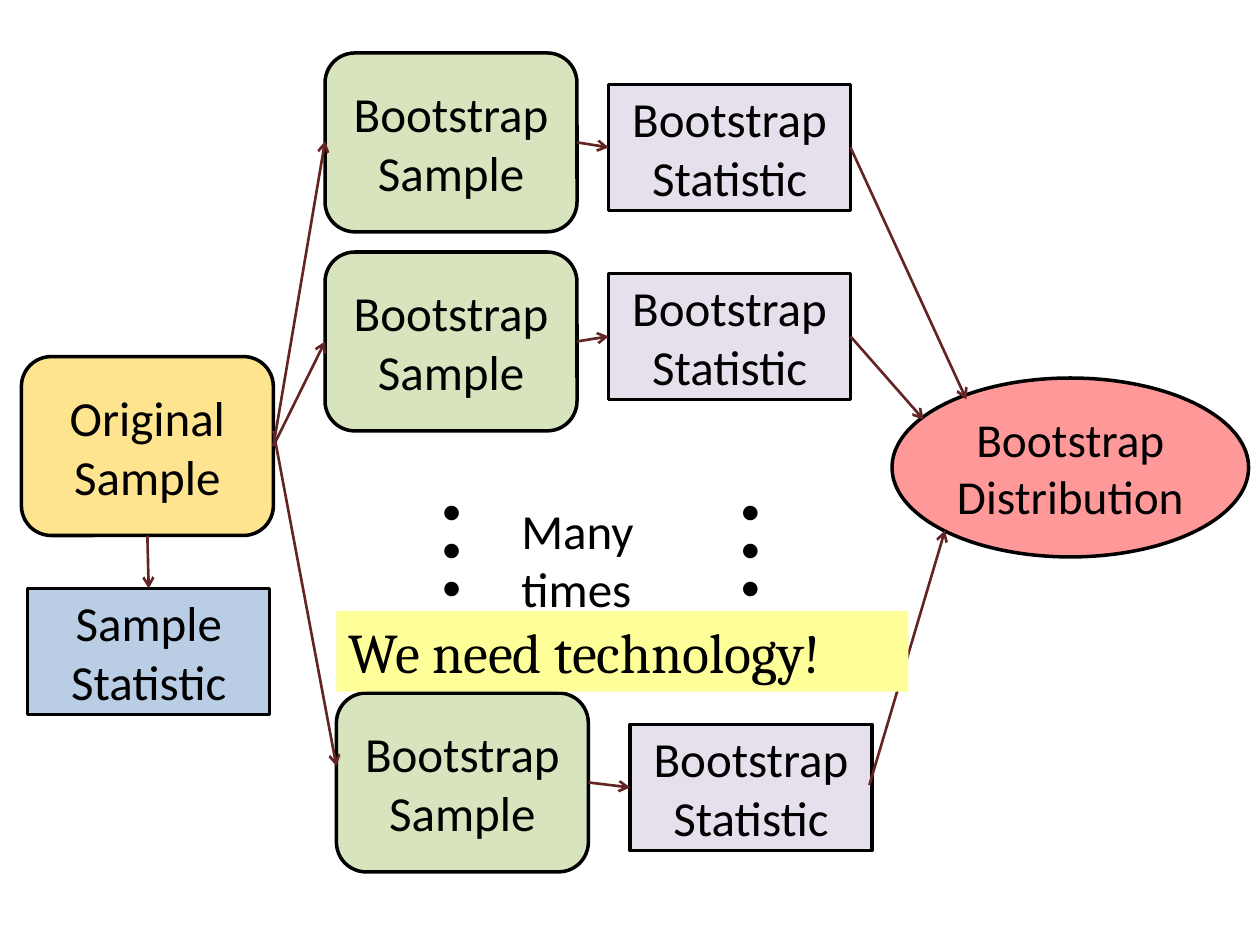
from lxml.etree import SubElement
from pptx import Presentation
from pptx.dml.color import RGBColor
from pptx.enum.shapes import MSO_CONNECTOR, MSO_SHAPE
from pptx.enum.text import MSO_ANCHOR, MSO_AUTO_SIZE, PP_ALIGN
from pptx.oxml.ns import qn
from pptx.util import Inches, Pt

COLORS = {
    "ink": "000000",
    "arrow": "632523",
    "original": "FFE48F",
    "sample": "D7E4BD",
    "bootstrap_statistic": "E6E0EC",
    "sample_statistic": "B9CDE5",
    "distribution": "FF9999",
    "banner": "FFFF99",
}

prs = Presentation()
prs.slide_width, prs.slide_height = Inches(10), Inches(7.5)
slide = prs.slides.add_slide(prs.slide_layouts[6])


def add_block(kind, left, top, width, height, text, fill=None, outlined=True,
              size=28, font="Calibri", align=PP_ALIGN.CENTER):
    box = [Inches(value) for value in (left, top, width, height)]
    if fill:
        block = slide.shapes.add_shape(kind, *box)
        block.shadow.inherit = False
        block.fill.solid()
        block.fill.fore_color.rgb = RGBColor.from_string(COLORS[fill])
        if outlined:
            block.line.color.rgb = RGBColor.from_string(COLORS["ink"])
            block.line.width = Pt(2)
        else:
            block.line.fill.background()
    else:
        block = slide.shapes.add_textbox(*box)
    frame = block.text_frame
    frame.text = text
    frame.word_wrap = True
    if fill and outlined:
        frame.vertical_anchor = MSO_ANCHOR.MIDDLE
    else:
        frame.vertical_anchor = MSO_ANCHOR.TOP
        frame.auto_size = MSO_AUTO_SIZE.SHAPE_TO_FIT_TEXT
    for paragraph in frame.paragraphs:
        paragraph.alignment = align
        for run in paragraph.runs:
            run.font.name = font
            run.font.size = Pt(size)
            run.font.color.rgb = RGBColor.from_string(COLORS["ink"])
    return block


def add_arrow(start, end):
    arrow = slide.shapes.add_connector(
        MSO_CONNECTOR.STRAIGHT, *[Inches(value) for value in start + end])
    arrow.line.color.rgb = RGBColor.from_string(COLORS["arrow"])
    arrow.line.width = Pt(1.5)
    properties = arrow.element.spPr
    SubElement(properties.find(qn("a:ln")), qn("a:tailEnd"), type="arrow")
    SubElement(properties, qn("a:effectLst"))


# Original sample and its statistic
add_block(MSO_SHAPE.ROUNDED_RECTANGLE, 0.17, 2.83, 2, 1.42,
          "Original Sample", "original")
add_block(MSO_SHAPE.RECTANGLE, 0.22, 4.67, 1.92, 1,
          "Sample Statistic", "sample_statistic")
add_arrow((1.17, 4.25), (1.18, 4.67))

# Bootstrap distribution
distribution = add_block(MSO_SHAPE.OVAL, 7.08, 3, 2.83, 1.42,
                         "Bootstrap Distribution", "distribution", size=27)
inner = distribution.text_frame
inner.margin_left = inner.margin_right = inner.margin_top = inner.margin_bottom = 0

# Bootstrap rows: sample corner, statistic corner, arrow points
rows = [
    ((2.58, 0.42), (4.83, 0.67), (2.17, 3.54), (2.58, 1.12), (6.75, 1.17), (7.67, 3.17)),
    ((2.58, 2), (4.83, 2.17), (2.17, 3.54), (2.58, 2.71), (6.75, 2.67), (7.33, 3.33)),
    ((2.67, 5.5), (5, 5.75), (2.17, 3.42), (2.67, 6.08), (6.9, 6.23), (7.5, 4.21)),
]
for sample, statistic, draw_from, draw_to, collect_from, collect_to in rows:
    add_block(MSO_SHAPE.ROUNDED_RECTANGLE, *sample, 2, 1.42,
              "Bootstrap Sample", "sample")
    add_block(MSO_SHAPE.RECTANGLE, *statistic, 1.92, 1,
              "Bootstrap Statistic", "bootstrap_statistic")
    add_arrow(draw_from, draw_to)
    add_arrow((sample[0] + 2, sample[1] + 0.71), (statistic[0], statistic[1] + 0.5))
    add_arrow(collect_from, collect_to)

# Repetition dots and label
for dots_left in (2.96, 5.33):
    add_block(None, dots_left, 3.85, 1.25, 1.31, "●\n●\n●", size=18)
add_block(None, 4.04, 3.92, 1.33, 1.04, "Many times", align=PP_ALIGN.LEFT)

# Technology banner
add_block(MSO_SHAPE.RECTANGLE, 2.67, 4.85, 4.54, 0.64, "We need technology!",
          "banner", outlined=False, size=32, font="Cambria", align=PP_ALIGN.LEFT)

prs.save("out.pptx")
